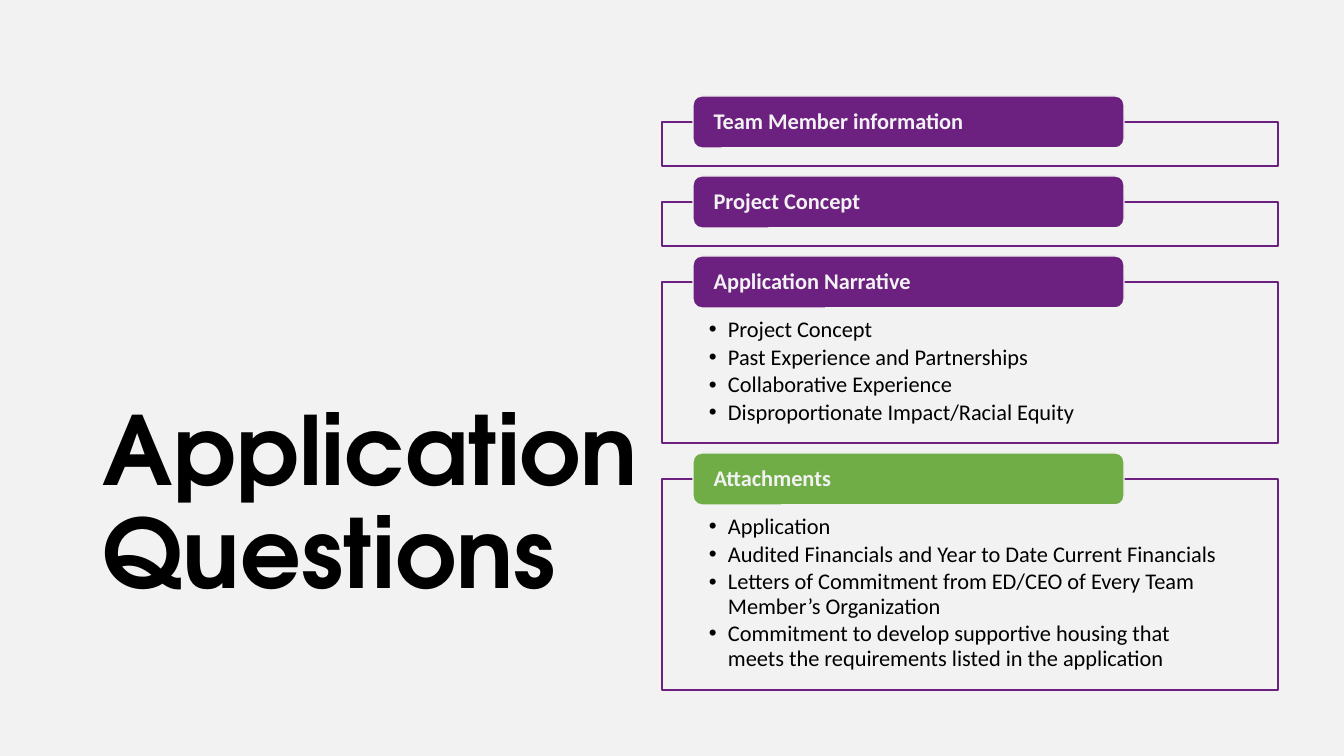
import dataclasses

import lxml.etree
import pptx
import pptx.dml.color
import pptx.enum.shapes
import pptx.enum.text
import pptx.oxml.ns
import pptx.util

EMU_PER_PX = 914400 / 100.8
PURPLE, GREEN = "6C2080", "70AD47"


@dataclasses.dataclass(frozen=True)
class Theme:
    background: str = "F2F2F2"
    ink: str = "000000"
    frame_line: str = PURPLE
    title_font: str = "TeX Gyre Adventor"
    body_font: str = "Calibri"
    title_size: int = 68
    body_size: int = 16
    line_width: int = 1
    line_spacing: float = 0.9


def px(length):
    return pptx.util.Emu(round(length * EMU_PER_PX))


def rgb(color):
    return pptx.dml.color.RGBColor.from_string(color)


class SlideBuilder:
    def __init__(self, deck, theme):
        self.theme = theme
        # Title plus two content placeholders, one for each list
        self.page = deck.slides.add_slide(deck.slide_layouts[3])
        self.lists = iter(list(self.page.placeholders)[1:])
        background = self.page.background.fill
        background.solid()
        background.fore_color.rgb = rgb(theme.background)

    def place(self, shape, left, top, width, height):
        shape.left, shape.top = px(left), px(top)
        shape.width, shape.height = px(width), px(height)

    def paint(self, shape, fill, line):
        shape.fill.solid()
        shape.fill.fore_color.rgb = rgb(fill)
        shape.line.color.rgb = rgb(line)
        shape.line.width = pptx.util.Pt(self.theme.line_width)

    def shape(self, kind, area, fill, line):
        shape = self.page.shapes.add_shape(kind, *map(px, area))
        shape.shadow.inherit = False
        self.paint(shape, fill, line)
        return shape

    def set_frame(self, frame, anchor, insets):
        frame.word_wrap = True
        frame.auto_size = pptx.enum.text.MSO_AUTO_SIZE.NONE
        frame.vertical_anchor = anchor
        (frame.margin_left, frame.margin_top,
         frame.margin_right, frame.margin_bottom) = map(px, insets)

    def style(self, para, font, size, color, bold, space_after=0):
        para.alignment = pptx.enum.text.PP_ALIGN.LEFT
        para.line_spacing = self.theme.line_spacing
        para.space_before = pptx.util.Pt(0)
        para.space_after = pptx.util.Pt(space_after)
        for span in para.runs:
            span.font.name, span.font.size = font, pptx.util.Pt(size)
            span.font.bold = bold
            span.font.color.rgb = rgb(color)

    def title(self, text, area):
        box = self.page.shapes.title
        self.place(box, *area)
        box.text_frame.text = text
        self.set_frame(box.text_frame, pptx.enum.text.MSO_ANCHOR.BOTTOM, (10, 5, 10, 5))
        self.style(box.text_frame.paragraphs[0], self.theme.title_font,
                   self.theme.title_size, self.theme.ink, True)

    def frame(self, area, items):
        theme = self.theme
        if items:
            box = next(self.lists)
            self.place(box, *area)
            self.paint(box, theme.background, theme.frame_line)
            self.fill_list(box.text_frame, items)
        else:
            box = self.shape(pptx.enum.shapes.MSO_SHAPE.RECTANGLE, area,
                             theme.background, theme.frame_line)
        # Slightly transparent fill
        color = box.fill._xPr.find(".//" + pptx.oxml.ns.qn("a:srgbClr"))
        lxml.etree.SubElement(color, pptx.oxml.ns.qn("a:alpha"), val="90000")

    def fill_list(self, frame, items):
        frame.text = "\n".join(items)
        self.set_frame(frame, pptx.enum.text.MSO_ANCHOR.TOP, (47, 36, 47, 12))
        for para in frame.paragraphs:
            properties = para._p.get_or_add_pPr()
            properties.set("marL", str(px(19)))
            properties.set("indent", str(px(-19)))
            lxml.etree.SubElement(properties, pptx.oxml.ns.qn("a:buChar"), char="•")
            self.style(para, self.theme.body_font, self.theme.body_size,
                       self.theme.ink, False, space_after=2.6)

    def header(self, text, area, fill):
        box = self.shape(pptx.enum.shapes.MSO_SHAPE.ROUNDED_RECTANGLE, area,
                         fill, self.theme.background)
        box.text_frame.text = text
        self.set_frame(box.text_frame, pptx.enum.text.MSO_ANCHOR.MIDDLE, (18, 0, 18, 0))
        self.style(box.text_frame.paragraphs[0], self.theme.body_font,
                   self.theme.body_size, self.theme.background, True)


# Heading, header colour, frame height, list items
SECTIONS = [
    ("Team Member information", PURPLE, 44, []),
    ("Project Concept", PURPLE, 44, []),
    ("Application Narrative", PURPLE, 161, [
        "Project Concept",
        "Past Experience and Partnerships",
        "Collaborative Experience",
        "Disproportionate Impact/Racial Equity",
    ]),
    ("Attachments", GREEN, 211, [
        "Application",
        "Audited Financials and Year to Date Current Financials",
        "Letters of Commitment from ED/CEO of Every Team Member’s Organization",
        "Commitment to develop supportive housing that meets the requirements "
        "listed in the application",
    ]),
]


def main():
    deck = pptx.Presentation()
    deck.slide_width, deck.slide_height = px(1344), px(756)
    builder = SlideBuilder(deck, Theme())
    builder.title("Application Questions", (93, 42, 580, 572))

    # Each header straddles the top edge of its frame
    header_height, gap = 52, 10
    header_top = 96
    for heading, color, frame_height, items in SECTIONS:
        frame_top = header_top + header_height // 2
        builder.frame((662, frame_top, 616, frame_height), items)
        builder.header(heading, (693, header_top, 431, header_height), color)
        header_top = frame_top + frame_height + gap

    deck.save("out.pptx")


if __name__ == "__main__":
    main()
